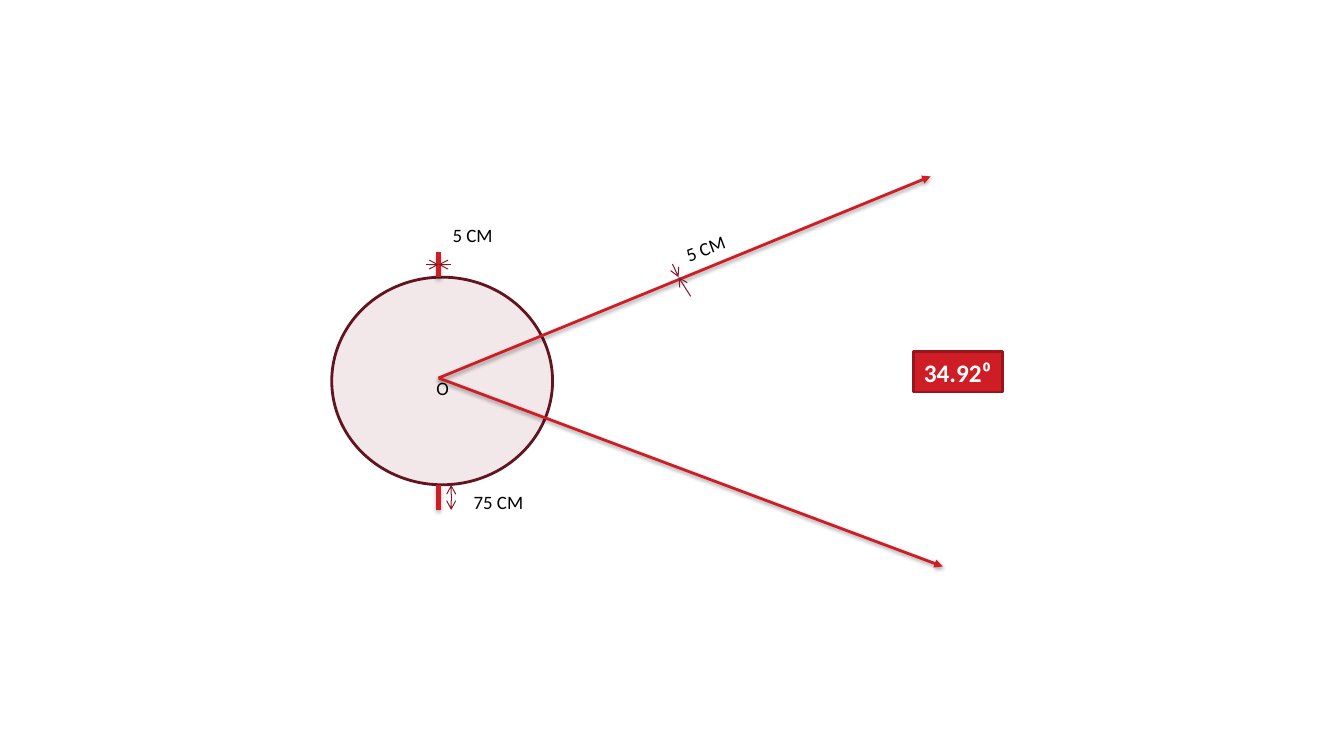
"""Build a slide showing a throwing circle and its 34.92⁰ sector."""
from lxml import etree
from pptx import Presentation
from pptx.dml.color import RGBColor
from pptx.enum.shapes import MSO_CONNECTOR, MSO_SHAPE
from pptx.enum.text import MSO_ANCHOR, MSO_AUTO_SIZE, PP_ALIGN
from pptx.oxml.ns import qn
from pptx.util import Inches, Pt

STRAIGHT = MSO_CONNECTOR.STRAIGHT
CIRCLE, RECT = MSO_SHAPE.FLOWCHART_CONNECTOR, MSO_SHAPE.RECTANGLE
FIT = MSO_AUTO_SIZE.SHAPE_TO_FIT_TEXT
LEFT, CENTER, MIDDLE = PP_ALIGN.LEFT, PP_ALIGN.CENTER, MSO_ANCHOR.MIDDLE
RED, DIM = "CE1D25", "841A29"
CX, CY = 4.35, 3.75
TOP, BOTTOM, MARK = 2.75, 4.81, 0.25
HALF = MARK / 2


def color(value):
    return RGBColor.from_string(value)


def write(sp, text, size, ink, bold, align, wrap):
    tf = sp.text_frame
    for name, value in {"word_wrap": wrap, "auto_size": FIT}.items():
        setattr(tf, name, value)
    p = tf.paragraphs[0]
    p.alignment = align
    r = p.add_run()
    r.text = text
    for name, value in {"name": "Calibri", "size": Pt(size), "bold": bold}.items():
        setattr(r.font, name, value)
    r.font.color.rgb = color(ink)


prs = Presentation()
prs.slide_width, prs.slide_height = Inches(13.33), Inches(7.5)
s = prs.slides.add_slide(prs.slide_layouts[6])

shapes = {}
for name, kind, box, fill, line in [
    ("circle", CIRCLE, (3.29, TOP, 2.19, BOTTOM - TOP), "841D2C", "621521"),
    ("angle", RECT, (9.06, 3.49, 0.88, 0.4), RED, "98151B"),
]:
    sp = s.shapes.add_shape(kind, *map(Inches, box))
    sp.shadow.inherit = False
    sp.fill.solid()
    sp.fill.fore_color.rgb = color(fill)
    sp.line.color.rgb = color(line)
    sp.line.width = Pt(2)
    shapes[name] = sp

tint = shapes["circle"].fill._xPr.find(".//" + qn("a:srgbClr"))
etree.SubElement(tint, qn("a:alpha"), val="10000")
shapes["angle"].text_frame.vertical_anchor = MIDDLE
write(shapes["angle"], "34.92⁰", 18, "FFFFFF", True, CENTER, False)

for text, box, rotation, wrap in [
    ("O", (4.23, 3.69, 0.33, 0.33), 0, False),
    ("5 CM", (4.39, 2.17, 0.78, 0.33), 0, True),
    ("5 CM", (6.7, 2.3, 0.6, 0.33), 339.7, False),
    ("75 CM", (4.6, 4.82, 0.74, 0.33), 0, False),
]:
    sp = s.shapes.add_textbox(*map(Inches, box))
    sp.rotation = rotation
    write(sp, text, 13.5, "000000", False, LEFT, wrap)

ray = (RED, 2, {"tailEnd": "triangle"}, (38, 1.6))
mark = (RED, 3, {}, (35, 1.8))
pointer = (DIM, 0.75, {"tailEnd": "arrow"}, None)
span = (DIM, 0.75, {"headEnd": "arrow", "tailEnd": "arrow"}, None)
for ends, (ink, width, heads, shadow) in [
    ((CX, CY, 9.23, 1.75), ray),
    ((CX, CY, 9.35, 5.62), ray),
    ((CX, TOP - MARK, CX, TOP), mark),
    ((CX, BOTTOM + MARK, CX, BOTTOM), mark),
    ((CX - HALF, TOP - HALF, CX, TOP - HALF), pointer),
    ((CX + HALF, TOP - HALF, CX, TOP - HALF), pointer),
    ((6.67, 2.62, 6.73, 2.75), pointer),
    ((6.85, 2.94, 6.73, 2.75), pointer),
    ((CX + HALF, BOTTOM, CX + HALF, BOTTOM + MARK), span),
]:
    cn = s.shapes.add_connector(STRAIGHT, *map(Inches, ends))
    cn.line.color.rgb = color(ink)
    cn.line.width = Pt(width)
    for end, kind in heads.items():
        etree.SubElement(cn.line._ln, qn("a:" + end), type=kind)
    effects = etree.SubElement(cn._element.spPr, qn("a:effectLst"))
    if shadow:
        opacity, distance = shadow
        outer = etree.SubElement(
            effects, qn("a:outerShdw"), blurRad=str(Pt(3.1)),
            dist=str(Pt(distance)), dir="5400000", rotWithShape="0")
        black = etree.SubElement(outer, qn("a:srgbClr"), val="000000")
        etree.SubElement(black, qn("a:alpha"), val=str(opacity * 1000))

prs.save("out.pptx")
